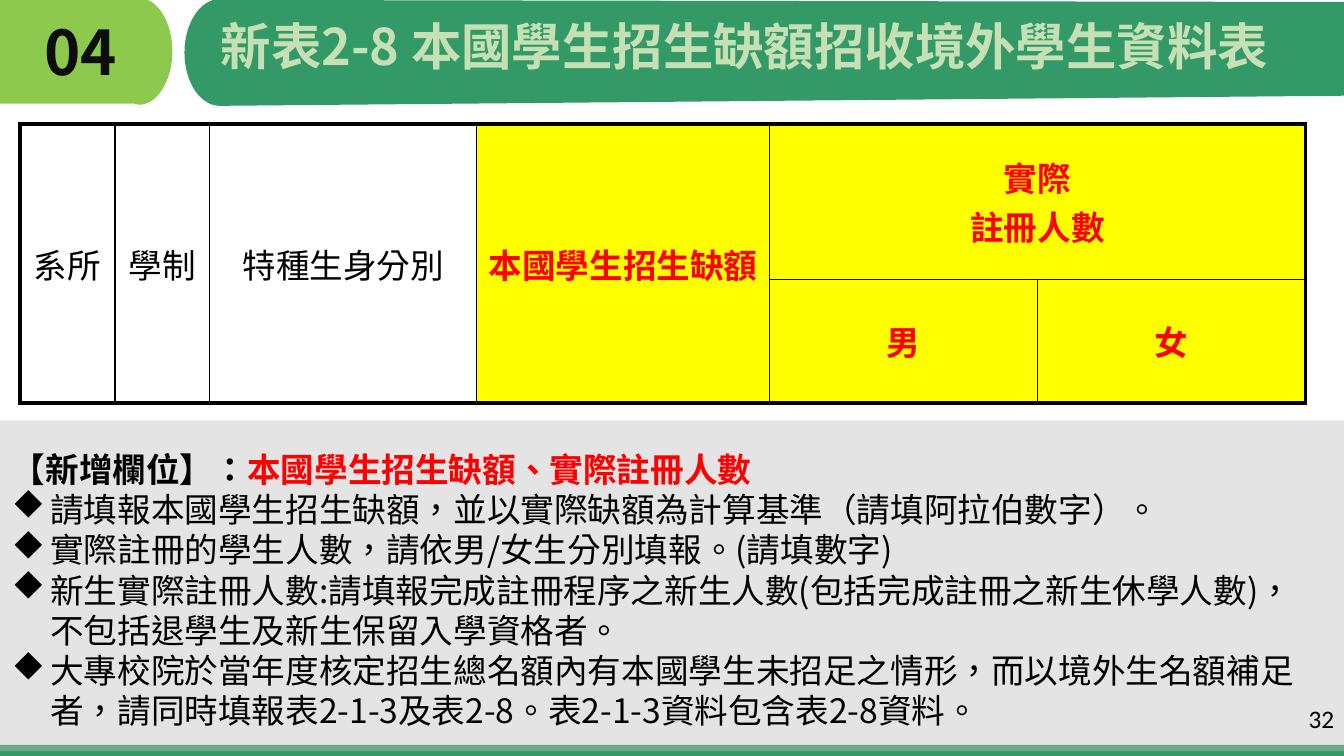
from pptx import Presentation
from pptx.dml.color import RGBColor
from pptx.enum.shapes import MSO_SHAPE as Shape
from pptx.enum.text import MSO_ANCHOR as Anchor, PP_ALIGN as Align
from pptx.oxml.ns import qn
from pptx.util import Inches, Pt
from lxml import etree

# Content
SECTION = "04"
HEADING = "新表2-8 本國學生招生缺額招收境外學生資料表"
PAGE_NUMBER = "32"
NEW_FIELDS = ("【新增欄位】：", "本國學生招生缺額、實際註冊人數")
NOTES = [
    "請填報本國學生招生缺額，並以實際缺額為計算基準（請填阿拉伯數字）。",
    "實際註冊的學生人數，請依男/女生分別填報。(請填數字)",
    "新生實際註冊人數:請填報完成註冊程序之新生人數(包括完成註冊之新生休學人數)，"
    "不包括退學生及新生保留入學資格者。",
    "大專校院於當年度核定招生總名額內有本國學生未招足之情形，而以境外生名額補足者，"
    "請同時填報表2-1-3及表2-8。表2-1-3資料包含表2-8資料。",
]
COLUMNS = [0.94, 0.94, 2.65, 2.9, 2.66, 2.66]
ROWS = [1.54, 1.23]
# row, column, rows spanned, columns spanned, lines, newly added
CELLS = [
    (0, 0, 2, 1, ["系所"], False),
    (0, 1, 2, 1, ["學制"], False),
    (0, 2, 2, 1, ["特種生身分別"], False),
    (0, 3, 2, 1, ["本國學生招生缺額"], True),
    (0, 4, 1, 2, ["實際", "註冊人數"], True),
    (1, 4, 1, 1, ["男"], True),
    (1, 5, 1, 1, ["女"], True),
]

FONT = "Noto Sans CJK SC"
BLACK = RGBColor(0x00, 0x00, 0x00)
INK = RGBColor(0x0D, 0x0D, 0x0D)
RED = RGBColor(0xFF, 0x00, 0x00)
YELLOW = RGBColor(0xFF, 0xFF, 0x00)
LIME = RGBColor(0x8C, 0xC9, 0x4C)
GREEN = RGBColor(0x33, 0x99, 0x66)
PALE_GREEN = RGBColor(0xC5, 0xE0, 0xB4)
GREY = RGBColor(0xBF, 0xBF, 0xBF)

deck = Presentation()
deck.slide_width, deck.slide_height = Inches(13.33), Inches(7.5)
page = deck.slides.add_slide(deck.slide_layouts[5])


def paint(shape, color):
    shape.shadow.inherit = False
    shape.fill.solid()
    shape.fill.fore_color.rgb = color
    shape.line.fill.background()


def curve(start, first, second, end, steps=16):
    """Points along a Bezier curve."""
    points = []
    for step in range(steps + 1):
        t = step / steps
        weights = ((1 - t) ** 3, 3 * t * (1 - t) ** 2, 3 * t * t * (1 - t), t ** 3)
        points.append(tuple(sum(w * p[axis] for w, p in zip(weights, (start, first, second, end)))
                            for axis in (0, 1)))
    return points


def add_outline(points, color):
    corners = [(Inches(x), Inches(y)) for x, y in points]
    builder = page.shapes.build_freeform(*corners[0])
    builder.add_line_segments(corners[1:], close=True)
    paint(builder.convert_to_shape(), color)


def add_bar(top, height, color):
    bar = page.shapes.add_shape(Shape.RECTANGLE, 0, Inches(top), deck.slide_width, Inches(height))
    paint(bar, color)
    return bar


def add_span(para, text, size, color, bold=False, font=FONT):
    span = para.add_run()
    span.text = text
    span.font.size, span.font.bold, span.font.name = Pt(size), bold, font
    span.font.color.rgb = color
    properties = span._r.get_or_add_rPr()
    properties.set("lang", "zh-TW")
    etree.SubElement(properties, qn("a:ea"), typeface=font)


def place(box, left, top, width, height):
    box.left, box.top, box.width, box.height = map(Inches, (left, top, width, height))
    box.text_frame.word_wrap = True
    box.text_frame.vertical_anchor = Anchor.TOP
    return box.text_frame.paragraphs[0]


def add_text(*area):
    box = page.shapes.add_textbox(0, 0, 0, 0)
    return box.text_frame, place(box, *area)


# Header tabs, footer strip and notes panel
add_outline(curve((1.38, -0.02), (1.56, -0.02), (1.71, 0.22), (1.71, 0.51))
            + curve((1.71, 0.51), (1.71, 0.8), (1.56, 1.04), (1.38, 1.04))
            + [(1.34, 1.03), (0, 1.03), (0, -0.01), (1.34, -0.01)], LIME)
add_outline(curve((2.18, 1.05), (1.99, 1.05), (1.83, 0.82), (1.83, 0.52))
            + curve((1.83, 0.52), (1.83, 0.23), (1.99, -0.01), (2.18, -0.01))
            + [(2.22, 0), (13.33, 0.02), (13.33, 0.95), (2.22, 1.05)], GREEN)
add_bar(7.39, 0.12, GREEN)
panel = add_bar(4.17, 3.28, GREY)
panel_color = panel.fill._xPr.find(qn("a:solidFill"))[0]
etree.SubElement(panel_color, qn("a:alpha"), val="41000")

# Section number (raised above the tabs), heading and page number
title = page.shapes.title
page.shapes._spTree.append(title._element)
para = place(title, 0.34, 0.17, 1.37, 1.45)
para.alignment, para.line_spacing = Align.LEFT, 0.9
add_span(para, SECTION, 44, INK, True)
frame, para = add_text(2.09, 0.17, 11.07, 0.82)
para.line_spacing = 0.9
add_span(para, HEADING, 36, PALE_GREEN, True)
frame, para = add_text(10.33, 6.93, 3, 0.4)
para.alignment = Align.RIGHT
add_span(para, PAGE_NUMBER, 18, BLACK, font="Calibri")

# Notes
LINE = 28.8
frame, para = add_text(0.02, 4.2, 13.32, 3.13)
frame.margin_right = Inches(0.3)
para.line_spacing = Pt(1.5 * LINE)
for text, color in zip(NEW_FIELDS, (BLACK, RED)):
    add_span(para, text, 24, color, True)
for note in NOTES:
    para = frame.add_paragraph()
    para.line_spacing = Pt(LINE)
    properties = para._p.get_or_add_pPr()
    properties.set("marL", str(Inches(0.38)))
    properties.set("indent", str(-Inches(0.38)))
    # "u" is the diamond in Wingdings
    etree.SubElement(properties, qn("a:buFont"), typeface="Wingdings", charset="2")
    etree.SubElement(properties, qn("a:buChar"), char="u")
    add_span(para, note, 24, BLACK)

# Table
table = page.shapes.add_table(len(ROWS), len(COLUMNS), Inches(0.2), Inches(1.23),
                              Inches(sum(COLUMNS)), Inches(sum(ROWS))).table
table.first_row = table.horz_banding = False
NO_STYLE = "{2D5ABB26-0587-4C30-8999-92F81FD0307C}"
table._tbl.tblPr.find(qn("a:tableStyleId")).text = NO_STYLE
for column, width in zip(table.columns, COLUMNS):
    column.width = Inches(width)
for row, height in zip(table.rows, ROWS):
    row.height = Inches(height)


def add_border(cell, side, points):
    border = etree.SubElement(cell._tc.get_or_add_tcPr(), qn("a:ln" + side), w=str(Pt(points)))
    fill = etree.SubElement(border, qn("a:solidFill"))
    etree.SubElement(fill, qn("a:srgbClr"), val=str(BLACK))


for row, column, down, across, lines, is_new in CELLS:
    cell = table.cell(row, column)
    if down * across > 1:
        cell.merge(table.cell(row + down - 1, column + across - 1))
    outer = {"L": column == 0, "R": column + across == len(COLUMNS),
             "T": row == 0, "B": row + down == len(ROWS)}
    for side, is_outer in outer.items():
        add_border(cell, side, 3 if is_outer else 1)
    if is_new:
        cell.fill.solid()
        cell.fill.fore_color.rgb = YELLOW
    else:
        cell.fill.background()
    cell.vertical_anchor = Anchor.MIDDLE
    cell.margin_left = cell.margin_right = Inches(0.02)
    cell.margin_top = cell.margin_bottom = 0
    for index, line in enumerate(lines):
        para = cell.text_frame.add_paragraph() if index else cell.text_frame.paragraphs[0]
        para.alignment = Align.CENTER
        add_span(para, line, 24, RED if is_new else BLACK, is_new)

deck.save("out.pptx")
